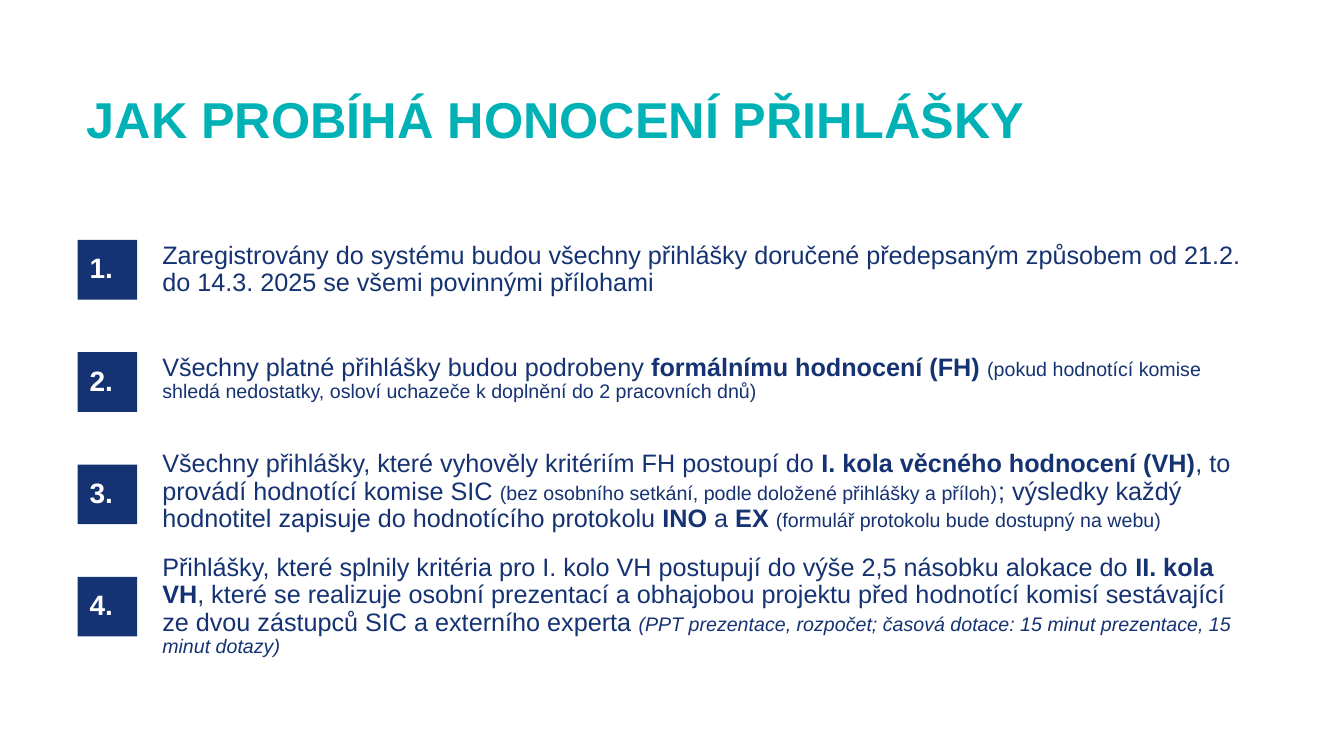
from dataclasses import dataclass

from lxml.etree import SubElement
from pptx import Presentation
from pptx.dml.color import RGBColor
from pptx.enum.shapes import MSO_SHAPE as Preset
from pptx.enum.text import MSO_ANCHOR as Anchor, MSO_AUTO_SIZE as AutoSize, PP_ALIGN as Align
from pptx.oxml.ns import qn
from pptx.util import Pt


@dataclass(frozen=True)
class Theme:
    font: str = "Arial"
    teal: RGBColor = RGBColor(0x00, 0xB1, 0xB6)
    navy: RGBColor = RGBColor(0x15, 0x32, 0x72)
    white: RGBColor = RGBColor(0xFF, 0xFF, 0xFF)
    title_size: int = 36
    number_size: int = 20
    body_size: int = 18
    note_size: int = 14


THEME = Theme()
BOLD = {"bold": True}
NOTE = {"size": THEME.note_size}
ITALIC_NOTE = {"size": THEME.note_size, "italic": True}

STEPS = [
    [("Zaregistrovány do systému budou všechny přihlášky doručené předepsaným způsobem "
      "od 21.2. do 14.3. 2025 se všemi povinnými přílohami", {})],
    [("Všechny platné přihlášky budou podrobeny ", {}),
     ("formálnímu hodnocení (FH) ", BOLD),
     ("(pokud hodnotící komise shledá nedostatky, osloví uchazeče k doplnění "
      "do 2 pracovních dnů)", NOTE)],
    [("Všechny přihlášky, které vyhověly kritériím FH postoupí do ", {}),
     ("I. kola věcného hodnocení (VH)", BOLD),
     (", to provádí hodnotící komise SIC ", {}),
     ("(bez osobního setkání, podle doložené přihlášky a příloh)", NOTE),
     ("; výsledky každý hodnotitel zapisuje do hodnotícího protokolu ", {}),
     ("INO", BOLD),
     (" a ", {}),
     ("EX ", BOLD),
     ("(formulář protokolu bude dostupný na webu)", NOTE)],
    [("Přihlášky, které splnily kritéria pro I. kolo VH postupují do výše 2,5 násobku "
      "alokace do ", {}),
     ("II. kola VH", BOLD),
     (", které se realizuje osobní prezentací a obhajobou projektu před hodnotící komisí "
      "sestávající ze dvou zástupců SIC a externího experta ", {}),
     ("(PPT prezentace, rozpočet; časová dotace: 15 minut prezentace, 15 minut dotazy)",
      ITALIC_NOTE)],
]

NUMBER_LEFT, NUMBER_TOP, NUMBER_SIDE, NUMBER_PITCH = 55.4, 171.4, 42.6, 80.2
TEXT_LEFT, TEXT_HEIGHT = 108.7, 56.9
TEXT_TOPS = [164.2, 241.9, 323, 404.6]
TEXT_WIDTHS = [796.3, 796.3, 779.8, 796.3]


def add_text(paragraph, text, size=THEME.body_size, color=THEME.navy, bold=False, italic=False):
    run = paragraph.add_run()
    run.text = text
    run.font.name = THEME.font
    run.font.size = Pt(size)
    run.font.color.rgb = color
    run.font.bold = bold
    run.font.italic = italic


class SlideBuilder:
    def __init__(self, presentation, theme):
        self.theme = theme
        self.slide = presentation.slides.add_slide(presentation.slide_layouts[4])

    def prepare(self, shape):
        frame = shape.text_frame
        frame.word_wrap = True
        frame.auto_size = AutoSize.NONE
        frame.vertical_anchor = Anchor.MIDDLE
        paragraph = frame.paragraphs[0]
        properties = paragraph._p.get_or_add_pPr()
        properties.set("marL", "0")
        properties.set("indent", "0")
        SubElement(properties, qn("a:buNone"))
        paragraph.alignment = Align.LEFT
        paragraph.line_spacing = 0.9
        paragraph.space_before = Pt(0)
        return paragraph

    def fill_placeholder(self, index, left, top, width, height, runs):
        shape = self.slide.placeholders[index]
        shape.left, shape.top = Pt(left), Pt(top)
        shape.width, shape.height = Pt(width), Pt(height)
        paragraph = self.prepare(shape)
        for text, style in runs:
            add_text(paragraph, text, **style)

    def title(self, text):
        style = {"size": self.theme.title_size, "color": self.theme.teal, "bold": True}
        self.fill_placeholder(0, 54.7, 59, 850.3, 56.9, [(text, style)])

    def step_text(self, index, top, width, runs):
        self.fill_placeholder(index, TEXT_LEFT, top, width, TEXT_HEIGHT, runs)

    def step_number(self, number):
        top = NUMBER_TOP + (number - 1) * NUMBER_PITCH
        shape = self.slide.shapes.add_shape(
            Preset.RECTANGLE, Pt(NUMBER_LEFT), Pt(top), Pt(NUMBER_SIDE), Pt(NUMBER_SIDE))
        shape.shadow.inherit = False
        shape.fill.solid()
        shape.fill.fore_color.rgb = self.theme.navy
        shape.line.fill.background()
        paragraph = self.prepare(shape)
        frame = shape.text_frame
        frame.margin_left, frame.margin_right = Pt(8.6), Pt(7.2)
        frame.margin_top = frame.margin_bottom = Pt(0)
        add_text(paragraph, f"{number}.", size=self.theme.number_size,
                 color=self.theme.white, bold=True)


def main():
    presentation = Presentation()
    presentation.slide_width, presentation.slide_height = Pt(960), Pt(540)
    builder = SlideBuilder(presentation, THEME)
    builder.title("JAK PROBÍHÁ HONOCENÍ PŘIHLÁŠKY")
    for number, (top, width, runs) in enumerate(zip(TEXT_TOPS, TEXT_WIDTHS, STEPS), start=1):
        builder.step_number(number)
        builder.step_text(number, top, width, runs)
    presentation.save("out.pptx")


if __name__ == "__main__":
    main()
